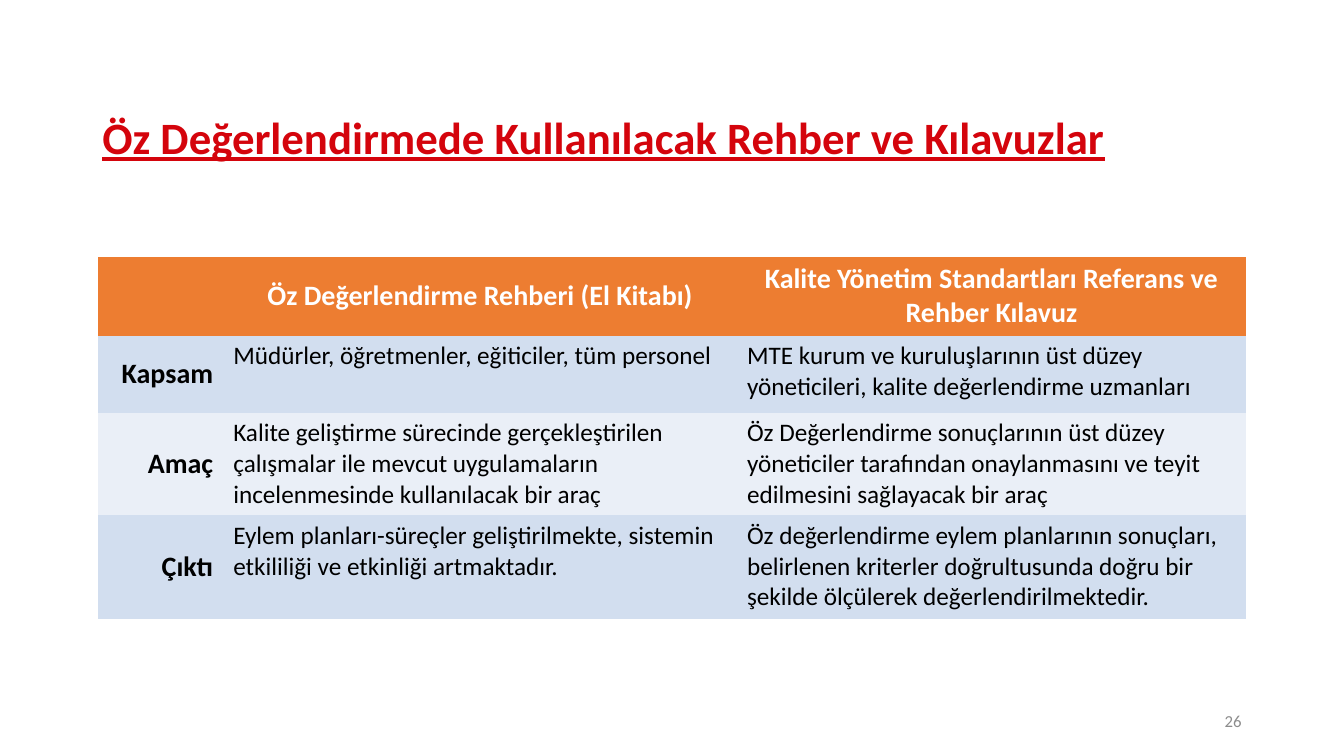
import pptx
import pptx.dml.color
import pptx.enum.text
import pptx.util

Pt = pptx.util.Pt
RGBColor = pptx.dml.color.RGBColor
ALIGN = pptx.enum.text.PP_ALIGN
ANCHOR = pptx.enum.text.MSO_ANCHOR

# Content
TITLE = "Öz Değerlendirmede Kullanılacak Rehber ve Kılavuzlar"
PAGE_NUMBER = "26"
GUIDE_ROWS = [
    ("", "Öz Değerlendirme Rehberi (El Kitabı)",
     "Kalite Yönetim Standartları Referans ve Rehber Kılavuz"),
    ("Kapsam", "Müdürler, öğretmenler, eğiticiler, tüm personel",
     "MTE kurum ve kuruluşlarının üst düzey yöneticileri, kalite değerlendirme uzmanları"),
    ("Amaç",
     "Kalite geliştirme sürecinde gerçekleştirilen çalışmalar ile mevcut uygulamaların "
     "incelenmesinde kullanılacak bir araç",
     "Öz Değerlendirme sonuçlarının üst düzey yöneticiler tarafından onaylanmasını ve teyit "
     "edilmesini sağlayacak bir araç"),
    ("Çıktı",
     "Eylem planları-süreçler geliştirilmekte, sistemin etkililiği ve etkinliği artmaktadır.",
     "Öz değerlendirme eylem planlarının sonuçları, belirlenen kriterler doğrultusunda doğru "
     "bir şekilde ölçülerek değerlendirilmektedir."),
]

# Format
FONT = "Calibri"
RED = RGBColor(0xD4, 0x04, 0x0C)
ORANGE = RGBColor(0xED, 0x7D, 0x31)
BLUE = RGBColor(0xD2, 0xDE, 0xEF)
PALE_BLUE = RGBColor(0xEA, 0xEF, 0xF7)
WHITE = RGBColor(0xFF, 0xFF, 0xFF)
BLACK = RGBColor(0, 0, 0)
GRAY = RGBColor(0x8C, 0x8C, 0x8C)
COLUMN_WIDTHS = [89.5, 367, 363.5]
ROW_HEIGHTS = [56, 55, 73.5, 74]


def write_text(frame, text, size=18, color=BLACK, bold=False, underline=False,
               align=ALIGN.LEFT, anchor=ANCHOR.TOP, line_spacing=1.0):
    frame.word_wrap = True
    frame.vertical_anchor = anchor
    paragraph = frame.paragraphs[0]
    paragraph.alignment = align
    paragraph.line_spacing = line_spacing
    target = paragraph
    if text:
        target = paragraph.add_run()
        target.text = text
    font = target.font
    font.name = FONT
    font.size = Pt(size)
    font.bold = bold
    font.underline = underline
    font.color.rgb = color


def cell_format(row, column):
    if row == 0:
        return dict(size=20, color=WHITE, bold=True, align=ALIGN.CENTER, anchor=ANCHOR.MIDDLE)
    if column == 0:
        return dict(size=20, bold=True, align=ALIGN.RIGHT, anchor=ANCHOR.MIDDLE)
    return {}


def main():
    presentation = pptx.Presentation()
    presentation.slide_width = Pt(960)
    presentation.slide_height = Pt(540)
    slide = presentation.slides.add_slide(presentation.slide_layouts[5])

    # Title
    title = slide.shapes.title
    title.left, title.top, title.width, title.height = Pt(66), Pt(70), Pt(894), Pt(60)
    title.text_frame.auto_size = pptx.enum.text.MSO_AUTO_SIZE.NONE
    write_text(title.text_frame, TITLE, size=32, color=RED, bold=True, underline=True,
               anchor=ANCHOR.MIDDLE, line_spacing=0.9)

    # Table of guides
    table = slide.shapes.add_table(
        len(GUIDE_ROWS), len(COLUMN_WIDTHS), Pt(70), Pt(183.5),
        Pt(sum(COLUMN_WIDTHS)), Pt(sum(ROW_HEIGHTS))).table
    for column, width in zip(table.columns, COLUMN_WIDTHS):
        column.width = Pt(width)
    for row, height in zip(table.rows, ROW_HEIGHTS):
        row.height = Pt(height)
    # Plain style borders are hidden by switching the banding and header off
    table.first_row = table.horz_banding = False
    style = table._tbl.tblPr.find(pptx.oxml.ns.qn("a:tableStyleId"))
    style.text = "{2D5ABB26-0587-4C30-8999-92F81FD0307C}"
    for row_index, texts in enumerate(GUIDE_ROWS):
        band = BLUE if row_index % 2 else PALE_BLUE
        for column_index, text in enumerate(texts):
            cell = table.cell(row_index, column_index)
            cell.fill.solid()
            cell.fill.fore_color.rgb = band if row_index else ORANGE
            options = cell_format(row_index, column_index)
            cell.vertical_anchor = options.pop("anchor", ANCHOR.TOP)
            write_text(cell.text_frame, text, anchor=None, **options)

    # Page number
    number = slide.shapes.add_textbox(Pt(678), Pt(500.5), Pt(216), Pt(28.75))
    write_text(number.text_frame, PAGE_NUMBER, size=12, color=GRAY,
               align=ALIGN.RIGHT, anchor=ANCHOR.MIDDLE)

    presentation.save("out.pptx")


if __name__ == "__main__":
    main()
